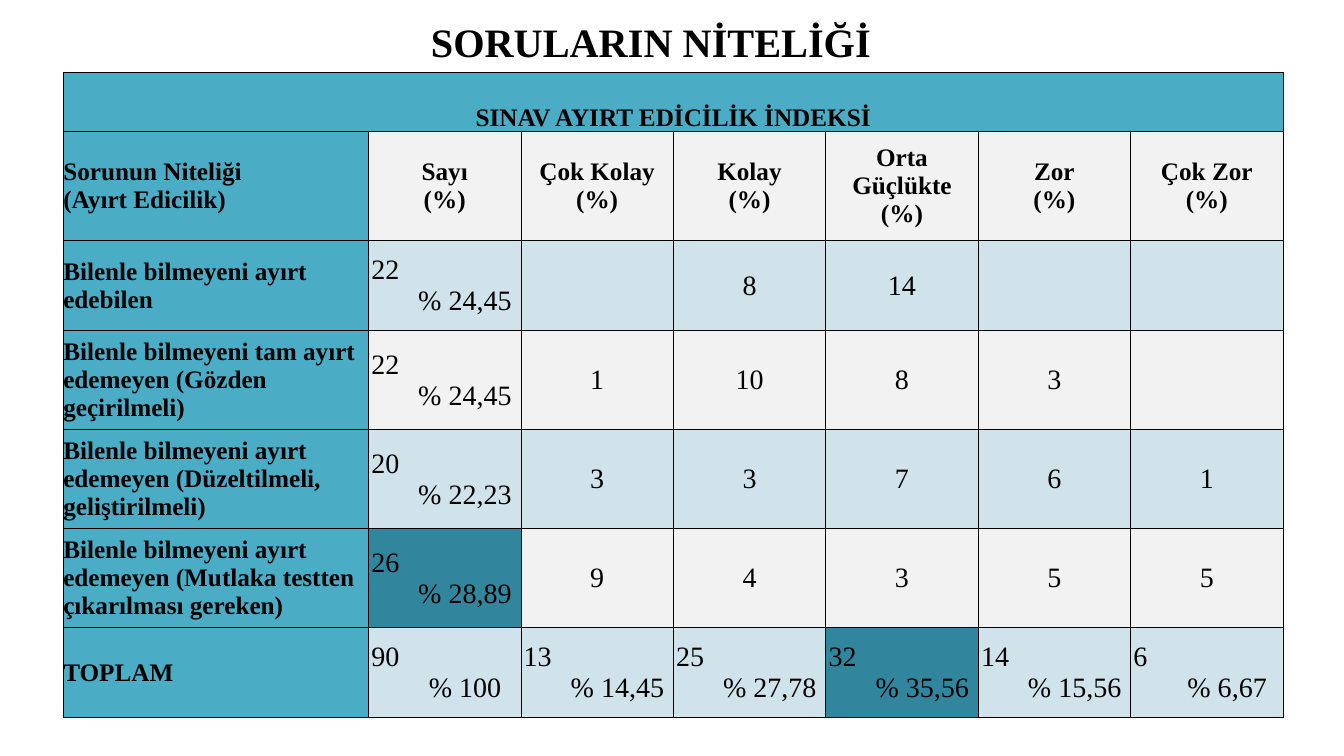
import pptx
import pptx.oxml
import pptx.util
from pptx.dml.color import RGBColor
from pptx.enum.text import MSO_ANCHOR, MSO_AUTO_SIZE, PP_ALIGN
from pptx.oxml.ns import nsdecls
from pptx.util import Pt

BLACK = RGBColor(0x00, 0x00, 0x00)
TEAL = RGBColor(0x4B, 0xAC, 0xC6)
DARK_TEAL = RGBColor(0x31, 0x85, 0x9C)
PALE_BLUE = RGBColor(0xD0, 0xE3, 0xEA)
PALE_GREY = RGBColor(0xF2, 0xF2, 0xF2)

HEADING = "SINAV AYIRT EDİCİLİK İNDEKSİ"
HEADERS = ["Sorunun Niteliği\n(Ayırt Edicilik)", "Sayı\n(%)", "Çok Kolay\n(%)",
           "Kolay\n(%)", "Orta Güçlükte\n(%)", "Zor\n(%)", "Çok Zor\n(%)"]
# A tuple is a count with its percentage.
RESULTS = [
    ["Bilenle bilmeyeni ayırt\nedebilen",
     ("22", "% 24,45"), "", "8", "14", "", ""],
    ["Bilenle bilmeyeni tam ayırt edemeyen (Gözden geçirilmeli)",
     ("22", "% 24,45"), "1", "10", "8", "3", ""],
    ["Bilenle bilmeyeni ayırt edemeyen (Düzeltilmeli, geliştirilmeli)",
     ("20", "% 22,23"), "3", "3", "7", "6", "1"],
    ["Bilenle bilmeyeni ayırt edemeyen (Mutlaka testten çıkarılması gereken)",
     ("26", "% 28,89"), "9", "4", "3", "5", "5"],
    ["TOPLAM", ("90", "% 100"), ("13", "% 14,45"), ("25", "% 27,78"),
     ("32", "% 35,56"), ("14", "% 15,56"), ("6", "% 6,67")],
]
HIGHLIGHTS = {(5, 1), (6, 4)}  # (row, column)
COL_WIDTHS = [218] + [108.9] * 6
ROW_HEIGHTS = [42.5, 77.8, 64.3, 70.7, 70.7, 70.7, 64.3]


class Deck:
    font = "Times New Roman"

    def __init__(self, prs):
        self.s = prs.slides.add_slide(prs.slide_layouts[5])

    def add_text(self, p, text, size, bold, align):
        p.alignment = align
        for i, line in enumerate(text.split("\n")):
            if i:
                p.add_line_break()
            r = p.add_run()
            r.text = line
            r.font.name, r.font.size, r.font.bold = self.font, Pt(size), bold
            r.font.color.rgb = BLACK

    def title(self, text, left, top, width, height):
        sp = self.s.shapes.title
        sp.left, sp.top, sp.width, sp.height = map(Pt, (left, top, width, height))
        tf = sp.text_frame
        tf.auto_size = MSO_AUTO_SIZE.NONE
        tf.vertical_anchor = MSO_ANCHOR.MIDDLE
        self.add_text(tf.paragraphs[0], text, 28.8, True, PP_ALIGN.CENTER)

    def table(self, left, top, widths, heights):
        frame = self.s.shapes.add_table(len(heights), len(widths), Pt(left), Pt(top),
                                        Pt(sum(widths)), Pt(sum(heights)))
        table = frame.table
        table.first_row = table.horz_banding = False
        for column, width in zip(table.columns, widths):
            column.width = Pt(width)
        for row, height in zip(table.rows, heights):
            row.height = Pt(height)
        return table

    def cell(self, cell, content, fill, size=20, bold=False, align=PP_ALIGN.CENTER,
             anchor=MSO_ANCHOR.MIDDLE):
        cell.margin_left = cell.margin_right = cell.margin_top = cell.margin_bottom = 0
        cell.vertical_anchor = anchor
        self.borders(cell)
        cell.fill.solid()
        cell.fill.fore_color.rgb = fill
        tf = cell.text_frame
        p = tf.paragraphs[0]
        if isinstance(content, tuple):
            count, percent = content
            self.add_text(p, count, size, bold, PP_ALIGN.LEFT)
            self.indent(p, 2)
            p = tf.add_paragraph()
            self.add_text(p, percent, size, bold, align)
            self.indent(p, 29)
        elif content:
            self.add_text(p, content, size, bold, align)

    def indent(self, p, left):
        pPr = p._p.get_or_add_pPr()
        pPr.set("marL", str(Pt(left)))
        pPr.set("indent", "0")

    def borders(self, cell):
        tcPr = cell._tc.get_or_add_tcPr()
        for side in "LRTB":
            tcPr.append(pptx.oxml.parse_xml(
                f'<a:ln{side} {nsdecls("a")} w="{Pt(0.5)}"><a:solidFill>'
                f'<a:srgbClr val="{BLACK}"/></a:solidFill></a:ln{side}>'))


def main():
    prs = pptx.Presentation()
    prs.slide_width, prs.slide_height = Pt(960), Pt(540)
    deck = Deck(prs)
    deck.title("SORULARIN NİTELİĞİ", 52.5, 17.5, 825, 24.5)
    table = deck.table(45.2, 51.6, COL_WIDTHS, ROW_HEIGHTS)

    for c in range(len(COL_WIDTHS)):
        deck.cell(table.cell(0, c), "" if c else HEADING, TEAL, 18, True,
                  anchor=MSO_ANCHOR.BOTTOM)
    table.cell(0, 0).merge(table.cell(0, len(COL_WIDTHS) - 1))

    for r, row in enumerate([HEADERS] + RESULTS, start=1):
        band = PALE_GREY if r % 2 else PALE_BLUE
        for c, content in enumerate(row):
            cell = table.cell(r, c)
            if c == 0:
                deck.cell(cell, content, TEAL, 18, True, PP_ALIGN.LEFT)
            elif r == 1:
                deck.cell(cell, content, band, 18, True)
            else:
                deck.cell(cell, content, DARK_TEAL if (r, c) in HIGHLIGHTS else band)

    prs.save("out.pptx")


if __name__ == "__main__":
    main()
